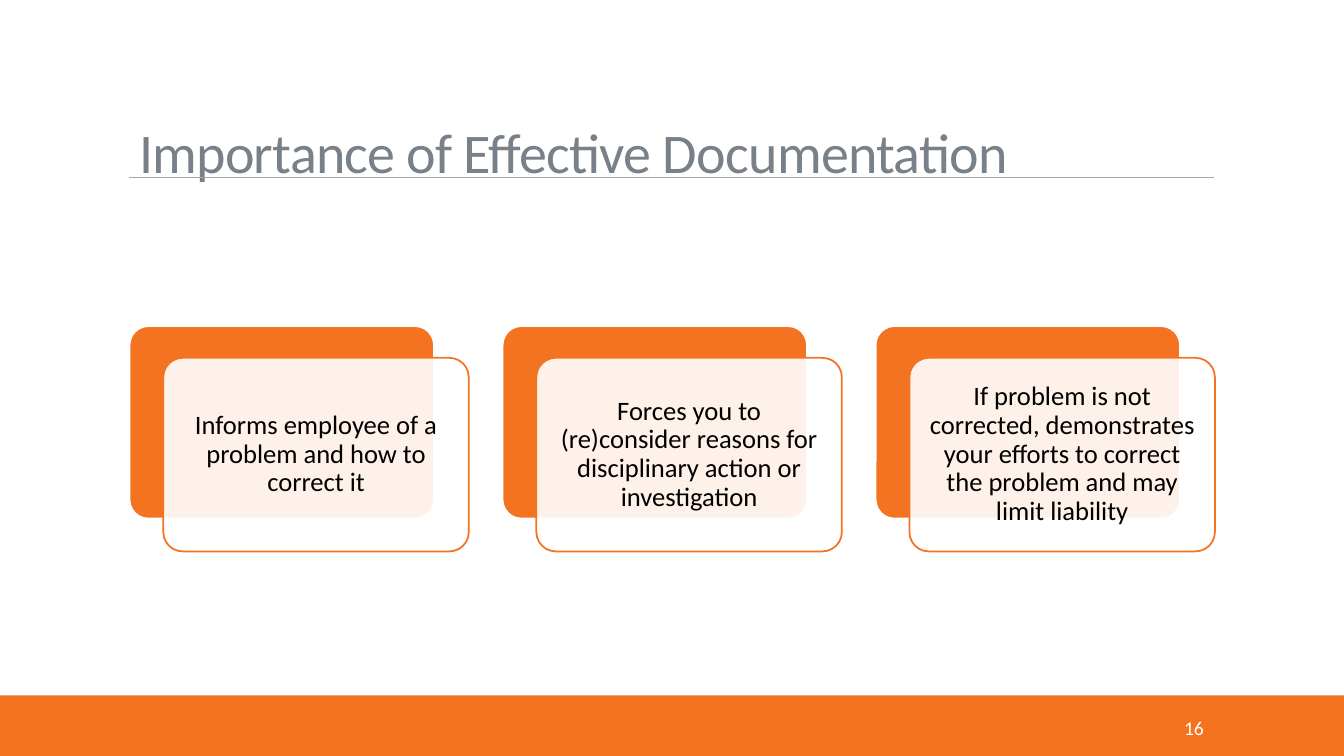
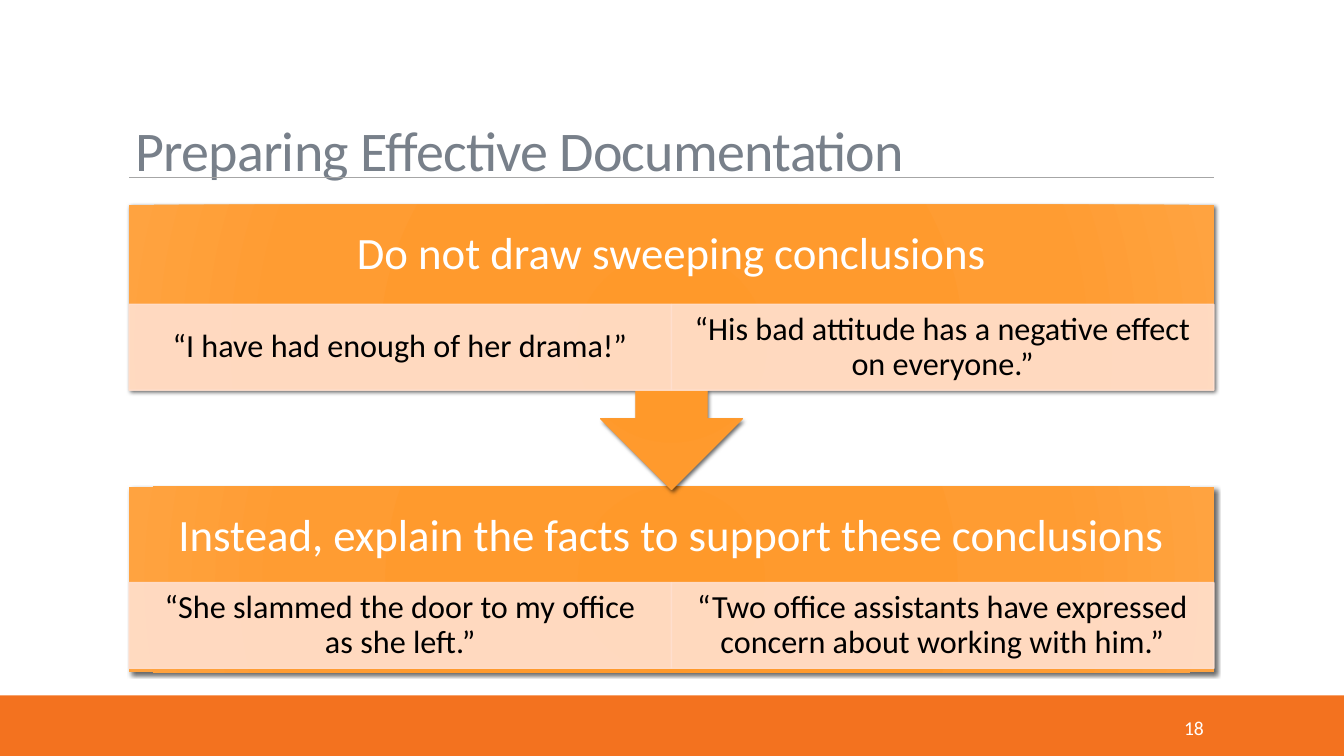
from lxml import etree
from pptx import Presentation
from pptx import util as u
from pptx.dml.color import RGBColor
from pptx.enum import shapes, text
from pptx.oxml.ns import qn

COLORS = {
    "band": "F3721F", "rule": "A6A6A6", "title": "78808A", "card": "F37320",
    "tile": "FFE0CF", "white": "FFFFFF", "black": "000000",
}
HEADER_STOPS = {0: "FF992A", 34: "FF9A2D", 70: "FF9C32", 100: "FFA340"}
FONT = "Calibri"
LEFT, WIDTH = 1.28, 10.76
SHAPE = shapes.MSO_SHAPE
ALIGN = text.PP_ALIGN
ANCHOR = text.MSO_ANCHOR


def rgb(name):
    return RGBColor.from_string(COLORS[name])


def add_child(parent, tag, **attributes):
    child = etree.SubElement(parent, qn(tag))
    for name, value in attributes.items():
        child.set(name, str(value))
    return child


def set_opacity(holder, percent):
    """Apply opacity to the solid fill directly inside a spPr or ln element."""
    color = holder.find(qn("a:solidFill")).find(qn("a:srgbClr"))
    add_child(color, "a:alpha", val=percent * 1000)


def write_text(box, words, size, color="black", align=ALIGN.CENTER,
               anchor=ANCHOR.MIDDLE, spacing=0.9, insets=(0.1, 0.05), tracking=None):
    """Fill a shape with one paragraph; insets are (sides, top and bottom)."""
    frame = box.text_frame
    frame.word_wrap = True
    frame.auto_size = text.MSO_AUTO_SIZE.NONE
    frame.vertical_anchor = anchor
    frame.margin_left = frame.margin_right = u.Inches(insets[0])
    frame.margin_top = frame.margin_bottom = u.Inches(insets[1])
    para = frame.paragraphs[0]
    para.alignment = align
    para.line_spacing = spacing
    span = para.add_run()
    span.text = words
    span.font.name = FONT
    span.font.size = u.Pt(size)
    span.font.color.rgb = rgb(color)
    if tracking is not None:
        span.font._element.set("spc", str(int(tracking * 100)))


class DeckBuilder:
    def __init__(self):
        self.deck = Presentation()
        self.deck.slide_width = u.Inches(13.33)
        self.deck.slide_height = u.Inches(7.5)
        self.page = None

    def new_page(self, title, number, title_at):
        self.page = self.deck.slides.add_slide(self.deck.slide_layouts[5])
        self.shape(SHAPE.RECTANGLE, (0, 6.9, 13.33, 0.6), "band")
        self.rule(LEFT, 1.76, LEFT + WIDTH)
        box = self.page.shapes.title
        box.left, box.top, box.width, box.height = map(u.Inches, title_at)
        write_text(box, title, 40, "title", ALIGN.LEFT, ANCHOR.TOP, 0.85,
                   insets=(0.1, 0.09), tracking=-0.5)
        self.label((10.61, 7.05, 1.43, 0.4), str(number), size=14, color="white",
                   align=ALIGN.RIGHT, anchor=ANCHOR.TOP, spacing=1.0)

    def rule(self, left, top, right):
        line = self.page.shapes.add_connector(
            shapes.MSO_CONNECTOR.STRAIGHT,
            *map(u.Inches, (left, top, right, top)))
        line.line.color.rgb = rgb("rule")
        line.line.width = u.Pt(1)
        add_child(line._element.spPr, "a:effectLst")

    def label(self, area, words, **style):
        box = self.page.shapes.add_textbox(*map(u.Inches, area))
        write_text(box, words, **style)

    def shape(self, kind, area, fill=None, line=None, width=1):
        box = self.page.shapes.add_shape(kind, *map(u.Inches, area))
        box.shadow.inherit = False
        if fill:
            box.fill.solid()
            box.fill.fore_color.rgb = rgb(fill)
        if line:
            box.line.color.rgb = rgb(line)
            box.line.width = u.Pt(width)
        else:
            box.line.fill.background()
        return box

    def card(self, left, top, words):
        """Draw a solid card with a translucent text card offset in front."""
        back = self.shape(SHAPE.ROUNDED_RECTANGLE, (left, top, 3.03, 1.92),
                          "card", "white", 2)
        front = self.shape(SHAPE.ROUNDED_RECTANGLE,
                           (left + 0.34, top + 0.32, 3.03, 1.92),
                           "white", "card", 1.25)
        for box in (back, front):
            box.adjustments[0] = 0.1
        set_opacity(front._element.spPr, 90)
        write_text(front, words, 19, insets=(0.08, 0.08))

    def panel(self, kind, top, height, heading, quotes, tile_top, rotation=0):
        """Draw a shaded panel with a heading and a row of quote tiles."""
        box = self.shape(kind, (LEFT, top, WIDTH, height))
        box.rotation = rotation
        self.shade(box)
        self.label((LEFT, top, WIDTH, 0.99), heading, size=32, color="white",
                   insets=(0.25, 0.25))
        tile_width = WIDTH / len(quotes)
        for index, quote in enumerate(quotes):
            tile = self.shape(SHAPE.RECTANGLE,
                              (LEFT + index * tile_width, tile_top, tile_width, 0.85),
                              "tile", "tile")
            properties = tile._element.spPr
            set_opacity(properties, 90)
            set_opacity(properties.find(qn("a:ln")), 90)
            write_text(tile, quote, 23, insets=(0.18, 0.03))

    def shade(self, box):
        """Give a shape the orange radial gradient and a soft shadow."""
        box.fill.gradient()
        properties = box._element.spPr
        gradient = properties.find(qn("a:gradFill"))
        for child in list(gradient):
            gradient.remove(child)
        stops = add_child(gradient, "a:gsLst")
        for position, color in HEADER_STOPS.items():
            stop = add_child(stops, "a:gs", pos=position * 1000)
            add_child(stop, "a:srgbClr", val=color)
        circle = add_child(gradient, "a:path", path="circle")
        add_child(circle, "a:fillToRect", l=0, t=0, r=0, b=0)
        shadow = add_child(properties.find(qn("a:effectLst")), "a:outerShdw",
                           blurRad=u.Pt(3), dist=u.Pt(2), dir=45 * 60000,
                           rotWithShape=0)
        color = add_child(shadow, "a:srgbClr", val=COLORS["black"])
        add_child(color, "a:alpha", val=60000)


def main():
    builder = DeckBuilder()

    builder.new_page("Importance of Effective Documentation", 16,
                     (1.28, 1.18, 9.11, 0.47))
    reasons = [
        "Informs employee of a problem and how to correct it",
        "Forces you to (re)consider reasons for disciplinary action or investigation",
        "If problem is not corrected, demonstrates your efforts to correct "
        "the problem and may limit liability",
    ]
    for index, reason in enumerate(reasons):
        builder.card(LEFT + index * 3.7, 3.23, reason)

    builder.new_page("Preparing Effective Documentation", 18,
                     (1.24, 1.16, 8.49, 0.47))
    builder.panel(SHAPE.RECTANGLE, 4.83, 1.84,
                  "Instead, explain the facts to support these conclusions",
                  ["“She slammed the door to my office as she left.”",
                   "“Two office assistants have expressed concern about working with him.”"],
                  tile_top=5.78)
    builder.panel(SHAPE.UP_ARROW_CALLOUT, 2.03, 2.83,
                  "Do not draw sweeping conclusions",
                  ["“I have had enough of her drama!”",
                   "“His bad attitude has a negative effect on everyone.”"],
                  tile_top=3.02, rotation=180)

    builder.deck.save("out.pptx")


if __name__ == "__main__":
    main()
